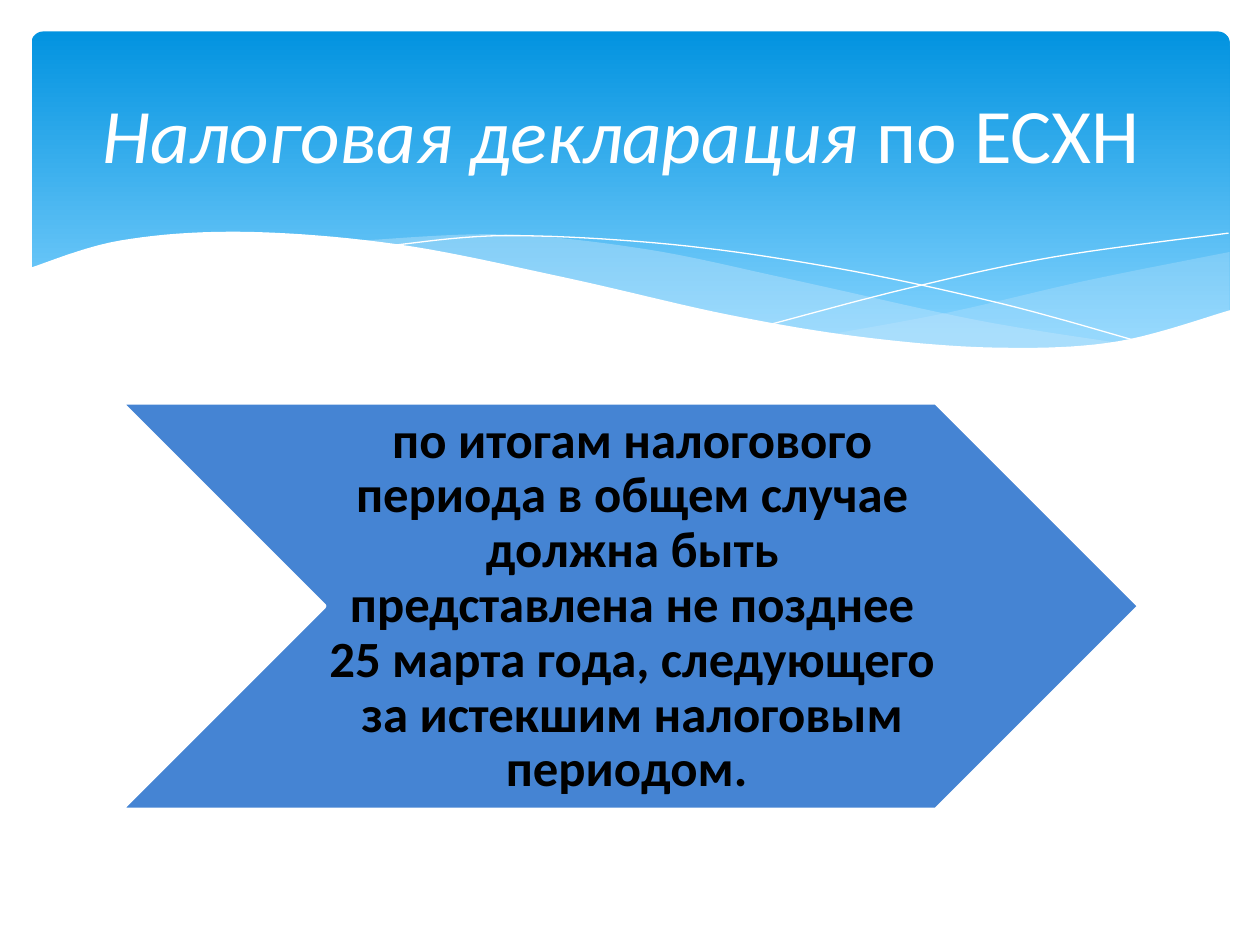
from dataclasses import dataclass
from typing import Optional

from lxml import etree
from pptx import Presentation
from pptx import util as u
from pptx.dml.color import RGBColor
from pptx.enum import shapes, text
from pptx.oxml import ns

WHITE = RGBColor(0xFF, 0xFF, 0xFF)
BLACK = RGBColor(0, 0, 0)
SKY_TOP = RGBColor(0x02, 0x93, 0xE0)
SKY_BOTTOM = RGBColor(0x83, 0xD3, 0xFE)
MIST = RGBColor(0xC6, 0xE7, 0xFC)
ARROW_BLUE = RGBColor(0x45, 0x84, 0xD3)
FONT = "Calibri"
CURVE_STEPS = 10


@dataclass(frozen=True)
class Area:
    left: float
    top: float
    width: float
    height: float

    def lengths(self) -> list:
        return [u.Inches(n) for n in (self.left, self.top, self.width, self.height)]


@dataclass(frozen=True)
class Wave:
    edges: tuple
    fill: Optional[RGBColor] = None
    opacity: int = 100


@dataclass(frozen=True)
class Span:
    words: str
    italic: bool = False


BANNER = Area(0.25, 0.25, 9.51, 2.7)
ARROW = Area(0.95, 3.19, 8.1, 3.24)
ARROW_TEXT = Area(2.57, 3.19, 4.86, 3.24)
TITLE = Area(0.5, 0.37, 9, 1.37)

RIGHT_MIST = Wave((
    ((9.76, 2), (8.61, 2.23), (7.53, 2.48), (6.61, 2.65)),
    ((6.61, 2.65), (7.45, 2.75), (8.24, 2.77), (9.05, 2.69), (9.76, 2.47)),
), MIST, 29)
MIDDLE_MIST = Wave((
    ((8.93, 2.73), (7.75, 2.54), (6.29, 2.22), (5.14, 1.98), (3.99, 1.86), (2.86, 1.91)),
    ((2.86, 1.91), (4.04, 2.11), (5.3, 2.4), (6.65, 2.66), (7.85, 2.78), (8.93, 2.73)),
), MIST, 40)
FALLING_LINE = Wave((
    ((3.09, 1.95), (4.01, 1.87), (5.33, 1.94), (6.65, 2.13), (7.95, 2.41), (9.07, 2.72)),
))
RISING_LINE = Wave((((6.13, 2.57), (7.2, 2.29), (8.36, 2.04), (9.75, 1.85)),))
FRONT_WAVE = Wave((
    ((9.77, 2.46), (8.87, 2.71), (7.93, 2.76), (6.88, 2.68), (5.79, 2.5),
     (4.47, 2.2), (3.16, 1.94), (1.93, 1.84), (0.95, 1.91), (0.23, 2.13)),
    ((0.23, 3.29), (9.77, 3.29)),
), WHITE)
WAVES = (RIGHT_MIST, MIDDLE_MIST, FALLING_LINE, RISING_LINE, FRONT_WAVE)


def blend(a: float, b: float, c: float, d: float, t: float) -> float:
    """Catmull-Rom value between b and c."""
    return b + t / 2 * (c - a + t * (2 * a - 5 * b + 4 * c - d + t * (3 * (b - c) + d - a)))


def smooth_edge(knots: tuple) -> list:
    padded = (knots[0], *knots, knots[-1])
    points = [knots[0]]
    for quad in zip(padded, padded[1:], padded[2:], padded[3:]):
        for step in range(1, CURVE_STEPS + 1):
            points.append(tuple(blend(*axis, step / CURVE_STEPS) for axis in zip(*quad)))
    return points


def draw_banner(page, area: Area) -> None:
    banner = page.shapes.add_shape(shapes.MSO_SHAPE.ROUNDED_RECTANGLE, *area.lengths())
    banner.shadow.inherit = False
    banner.adjustments[0] = 0.034
    banner.line.fill.background()
    banner.fill.gradient()
    banner.fill.gradient_angle = 270
    stops = zip(banner.fill.gradient_stops, (SKY_TOP, SKY_BOTTOM), (0, 0.9))
    for stop, color, position in stops:
        stop.color.rgb = color
        stop.position = position


def draw_wave(page, wave: Wave) -> None:
    points = [(u.Inches(x), u.Inches(y)) for edge in wave.edges for x, y in smooth_edge(edge)]
    builder = page.shapes.build_freeform(*points[0])
    builder.add_line_segments(points[1:], close=wave.fill is not None)
    shape = builder.convert_to_shape()
    shape.shadow.inherit = False
    if wave.fill is None:
        shape.fill.background()
        shape.line.color.rgb = WHITE
        shape.line.width = u.Pt(0)
        return
    shape.line.fill.background()
    shape.fill.solid()
    shape.fill.fore_color.rgb = wave.fill
    if wave.opacity < 100:
        color = shape.element.spPr.find(".//" + ns.qn("a:srgbClr"))
        etree.SubElement(color, ns.qn("a:alpha"), val=str(wave.opacity * 1000))


def draw_arrow(page, area: Area) -> None:
    arrow = page.shapes.add_shape(shapes.MSO_SHAPE.CHEVRON, *area.lengths())
    arrow.shadow.inherit = False
    arrow.fill.solid()
    arrow.fill.fore_color.rgb = ARROW_BLUE
    arrow.line.color.rgb = WHITE
    arrow.line.width = u.Pt(3)


def draw_text(page, area: Area, spans: tuple, size: int, color: RGBColor,
              bold: bool = False, spacing: float = 1.0, insets: Optional[tuple] = None) -> None:
    frame = page.shapes.add_textbox(*area.lengths()).text_frame
    frame.word_wrap = True
    frame.vertical_anchor = text.MSO_ANCHOR.MIDDLE
    if insets:
        (frame.margin_left, frame.margin_top,
         frame.margin_right, frame.margin_bottom) = map(u.Inches, insets)
    para = frame.paragraphs[0]
    para.alignment = text.PP_ALIGN.CENTER
    para.line_spacing = spacing
    para.font.name = FONT
    para.font.size = u.Pt(size)
    para.font.bold = bold
    para.font.color.rgb = color
    for span in spans:
        run = para.add_run()
        run.text = span.words
        if span.italic:
            run.font.italic = True


def main() -> None:
    deck = Presentation()
    deck.slide_width, deck.slide_height = u.Inches(10), u.Inches(7.5)
    page = deck.slides.add_slide(deck.slide_layouts[6])
    draw_banner(page, BANNER)
    for wave in WAVES:
        draw_wave(page, wave)
    draw_arrow(page, ARROW)
    deadline = Span("по итогам налогового периода в общем случае должна быть представлена "
                    "не позднее 25 марта года, следующего за истекшим налоговым периодом. ")
    draw_text(page, ARROW_TEXT, (deadline,), 29, BLACK, bold=True, spacing=0.9,
              insets=(0.04, 0.02, 0, 0.02))
    heading = (Span("Налоговая декларация", italic=True), Span(" по ЕСХН "))
    draw_text(page, TITLE, heading, 44, WHITE)
    deck.save("out.pptx")


if __name__ == "__main__":
    main()
